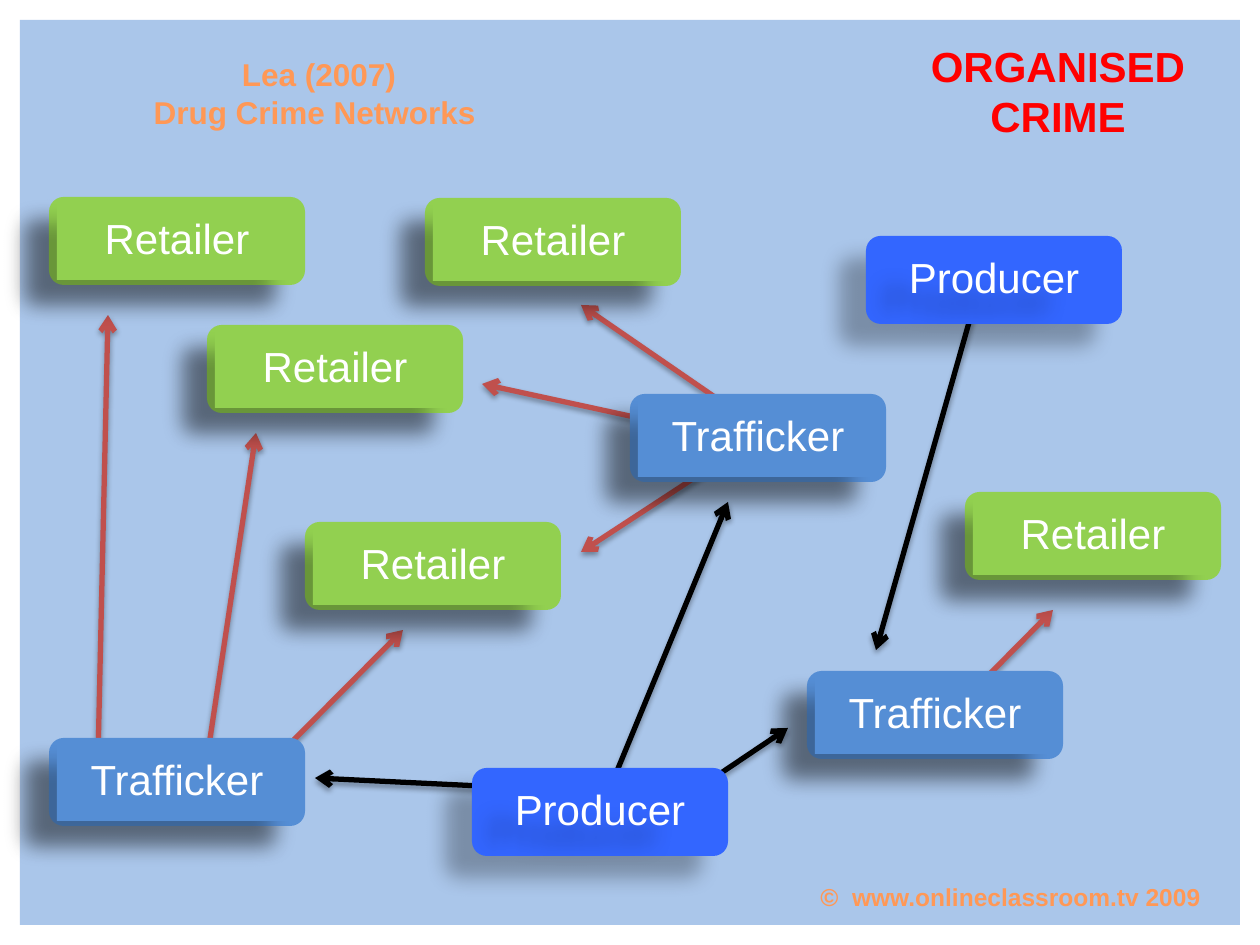
from pptx import Presentation
from pptx.dml.color import RGBColor
from pptx.enum.shapes import MSO_CONNECTOR, MSO_SHAPE
from pptx.enum.text import MSO_ANCHOR, PP_ALIGN
from pptx.oxml import parse_xml
from pptx.oxml.ns import nsdecls
from pptx.util import Emu, Pt

# Content (lengths in px)
COLOURS = {
    "Retailer": "92D050", "Trafficker": "558ED5", "Producer": "3366FF",
    "supply": "000000", "sale": "C0504D",
    "panel": "AAC6EA", "title": "FF0000", "caption": "FF9856", "label": "FFFFFF",
}
TITLE = "ORGANISED CRIME"
CAPTIONS = [  # lines, (left, top, width, height), size, alignment
    (["Lea (2007)", "Drug Crime Networks "], (137, 49, 364, 89), 18, PP_ALIGN.CENTER),
    (["©  www.onlineclassroom.tv 2009"], (808, 876, 423, 43), 14, PP_ALIGN.LEFT),
]
BOXES = [  # role, left, top
    ("Trafficker", 630, 394), ("Producer", 866, 236), ("Retailer", 207, 325),
    ("Trafficker", 807, 671), ("Retailer", 305, 522), ("Retailer", 49, 197),
    ("Producer", 472, 768), ("Retailer", 965, 492), ("Trafficker", 49, 738),
    ("Retailer", 425, 198),
]
ARROWS = {  # start x, start y, end x, end y
    "supply": [(610, 788, 728, 502), (669, 808, 788, 728),
               (974, 305, 876, 650), (522, 788, 315, 778)],
    "sale": [(98, 759, 108, 315), (207, 759, 256, 433), (256, 778, 403, 630),
             (965, 699, 1053, 610), (738, 413, 581, 305), (708, 433, 482, 384),
             (760, 435, 581, 552)],
}
BOX_SIZE = (256, 88)
INSET = (8, 5)
BOX_SHADOW = (28, 11.8, 19.7, 141)  # opacity %, blur pt, distance pt, degrees
ARROW_SHADOW = (35, 3.1, 1.8, 90)


def px(*lengths):
    return [Emu(round(length * 914400 / 126)) for length in lengths]


def colour(name):
    return RGBColor.from_string(COLOURS[name])


def add_shadow(shape, opacity, blur, distance, angle):
    shape.element.spPr.append(parse_xml(
        f'<a:effectLst {nsdecls("a")}><a:outerShdw blurRad="{Pt(blur)}" '
        f'dist="{Pt(distance)}" dir="{angle * 60000}" rotWithShape="0">'
        f'<a:srgbClr val="000000"><a:alpha val="{opacity * 1000}"/></a:srgbClr>'
        '</a:outerShdw></a:effectLst>'))


def add_block(shapes, kind, place, fill=None):
    block = shapes.add_shape(kind, *px(*place))
    if fill:
        block.fill.solid()
        block.fill.fore_color.rgb = colour(fill)
    else:
        block.fill.background()
    block.line.fill.background()
    return block


def write(frame, lines, size, name, alignment, bold=True):
    frame.word_wrap = True
    frame.text = "\n".join(lines)
    for para in frame.paragraphs:
        para.alignment = alignment
        para.font.name = "Arial"
        para.font.size = Pt(size)
        para.font.bold = bold
        para.font.color.rgb = colour(name)


def add_arrow(page, kind, ends):
    arrow = page.shapes.add_connector(MSO_CONNECTOR.STRAIGHT, *px(*ends))
    arrow.line.width = Pt(3)
    arrow.line.color.rgb = colour(kind)
    arrow.line._get_or_add_ln().append(
        parse_xml(f'<a:tailEnd {nsdecls("a")} type="arrow"/>'))
    add_shadow(arrow, *ARROW_SHADOW)


def add_box(page, role, left, top):
    width, height = BOX_SIZE
    across, down = INSET
    group = page.shapes.add_group_shape()
    outer = add_block(group.shapes, MSO_SHAPE.ROUNDED_RECTANGLE,
                      (left, top, width, height), role)
    inner = add_block(group.shapes, MSO_SHAPE.RECTANGLE,
                      (left + across, top + down, width - 2 * across, height - 2 * down),
                      None if role == "Producer" else role)
    for block in (outer, inner):
        add_shadow(block, *BOX_SHADOW)
    frame = inner.text_frame
    frame.margin_left = frame.margin_right = frame.margin_top = frame.margin_bottom = 0
    frame.vertical_anchor = MSO_ANCHOR.MIDDLE
    write(frame, [role], 24, "label", PP_ALIGN.CENTER, bold=False)
    frame.paragraphs[0].line_spacing = 0.9


def main():
    deck = Presentation()
    deck.slide_width, deck.slide_height = px(1260, 945)
    page = deck.slides.add_slide(deck.slide_layouts[5])

    # Background panel and title
    panel = add_block(page.shapes, MSO_SHAPE.RECTANGLE, (20, 20, 1220, 905), "panel")
    panel.shadow.inherit = False
    title = page.shapes.title
    panel.element.addnext(title.element)
    title.left, title.top, title.width, title.height = px(876, 34, 364, 115)
    title.text_frame.vertical_anchor = MSO_ANCHOR.TOP
    write(title.text_frame, [TITLE], 24, "title", PP_ALIGN.CENTER)

    # Network: arrows run beneath the boxes
    for kind, routes in ARROWS.items():
        for ends in routes:
            add_arrow(page, kind, ends)
    for box in BOXES:
        add_box(page, *box)

    # Captions
    for lines, place, size, alignment in CAPTIONS:
        caption = page.shapes.add_textbox(*px(*place))
        write(caption.text_frame, lines, size, "caption", alignment)

    deck.save("out.pptx")


if __name__ == "__main__":
    main()
